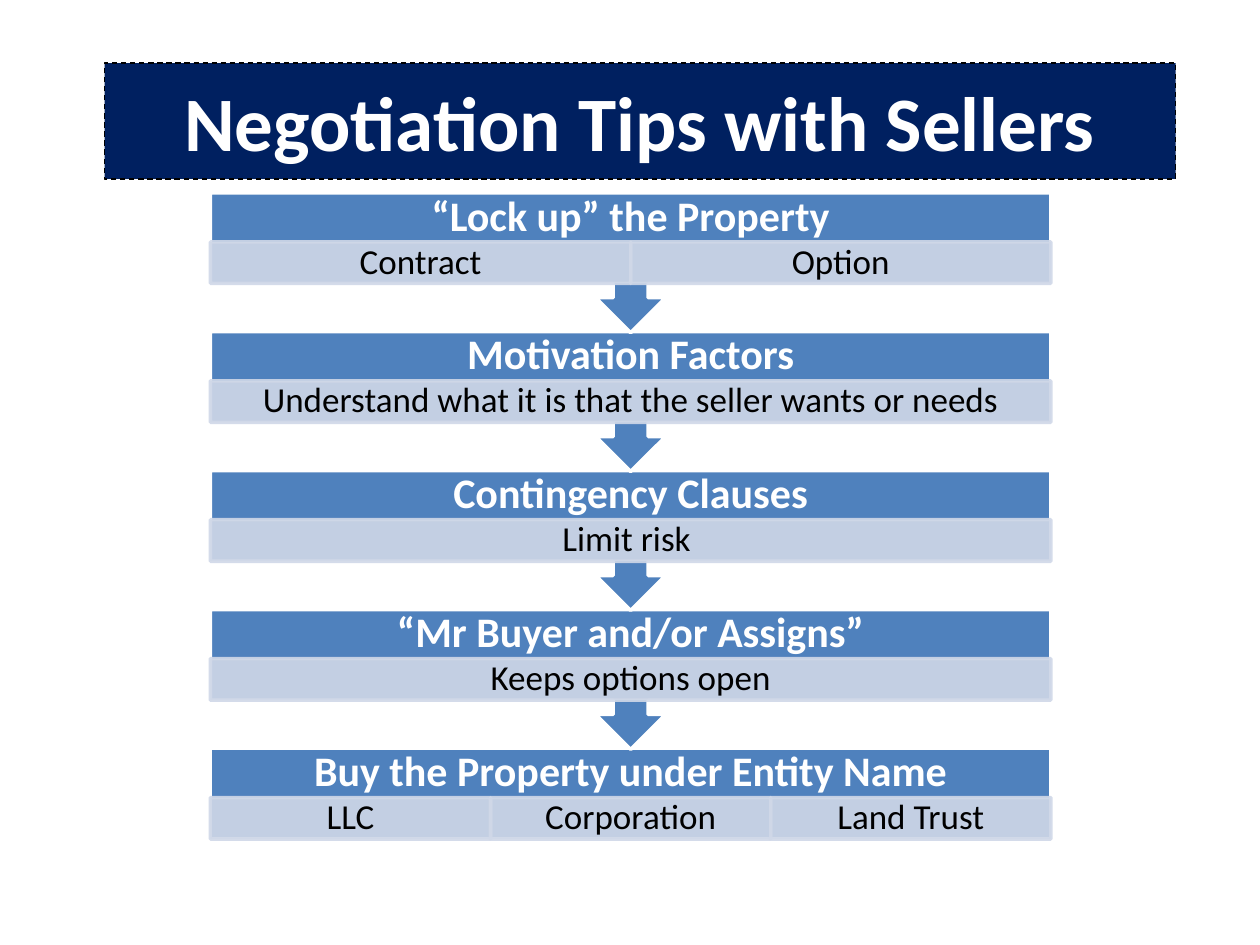
from lxml import etree
from pptx import Presentation
from pptx import util as u
from pptx.dml.color import RGBColor
from pptx.enum import dml, shapes, text
from pptx.oxml.ns import qn

FONT = "Calibri"
WHITE, BLACK, NAVY, BLUE, PALE = "FFFFFF", "000000", "002060", "4F81BD", "D0D8E8"

# Flow geometry in inches
LEFT, WIDTH = 1.67, 6.67
FIRST_TOP, LAST_TOP = 1.53, 5.94
HEADING_HEIGHT, DETAIL_HEIGHT = 0.39, 0.33
CALLOUT_HEIGHT, LAST_HEIGHT = 1.11, 0.72

STEPS = [
    ("“Lock up” the Property", ["Contract", "Option"]),
    ("Motivation Factors", ["Understand what it is that the seller wants or needs"]),
    ("Contingency Clauses", ["Limit risk "]),
    ("“Mr Buyer and/or Assigns”", ["Keeps options open"]),
    ("Buy the Property under Entity Name", ["LLC", "Corporation", "Land Trust"]),
]


def color(value):
    return RGBColor.from_string(value)


def paint(shape, fill, line, width, opacity=None):
    """Fill and outline a shape, optionally see-through (opacity in percent)."""
    shape.fill.solid()
    shape.fill.fore_color.rgb = color(fill)
    shape.line.color.rgb = color(line)
    shape.line.width = u.Pt(width)
    if opacity is not None:
        for tone in shape._element.spPr.iter(qn("a:srgbClr")):
            etree.SubElement(tone, qn("a:alpha"), val=str(opacity * 1000))


def write(shape, wording, size, tint, bold=False, insets=(0.1, 0.05), spacing=0.9):
    """Put one centred line into a shape; insets are (sides, top and bottom)."""
    frame = shape.text_frame
    frame.word_wrap = True
    frame.auto_size = text.MSO_AUTO_SIZE.NONE
    frame.vertical_anchor = text.MSO_ANCHOR.MIDDLE
    frame.margin_left = frame.margin_right = u.Inches(insets[0])
    frame.margin_top = frame.margin_bottom = u.Inches(insets[1])
    para = frame.paragraphs[0]
    para.alignment = text.PP_ALIGN.CENTER
    para.line_spacing = spacing
    span = para.add_run()
    span.text = wording
    span.font.name = FONT
    span.font.size = u.Pt(size)
    span.font.bold = bold
    span.font.color.rgb = color(tint)


def add_box(flow, kind, left, top, width, height):
    box = flow.shapes.add_shape(kind, *map(u.Inches, (left, top, width, height)))
    box.shadow.inherit = False
    return box


def add_title(page, wording):
    title = page.shapes.title
    title.left, title.top = u.Inches(0.83), u.Inches(0.5)
    title.width, title.height = u.Inches(8.5), u.Inches(0.92)
    paint(title, NAVY, BLACK, 0.75)
    title.line.dash_style = dml.MSO_LINE.DASH
    write(title, wording, 44, WHITE, bold=True, spacing=1.0)


def add_step(flow, top, heading, details, is_last):
    # Block, with a down arrow to the next step unless it is the last
    if is_last:
        block = add_box(flow, shapes.MSO_SHAPE.RECTANGLE, LEFT, top, WIDTH, LAST_HEIGHT)
    else:
        block = add_box(flow, shapes.MSO_SHAPE.UP_ARROW_CALLOUT,
                        LEFT, top, WIDTH, CALLOUT_HEIGHT)
        block.rotation = 180
    paint(block, BLUE, WHITE, 2)

    # Heading, kept apart so that it stays upright
    label = flow.shapes.add_textbox(
        *map(u.Inches, (LEFT, top, WIDTH, HEADING_HEIGHT)))
    write(label, heading, 24, WHITE, bold=True, insets=(0.19, 0.19))

    # Details share the width equally
    cell_width = WIDTH / len(details)
    detail_top = top + HEADING_HEIGHT
    for column, detail in enumerate(details):
        cell = add_box(flow, shapes.MSO_SHAPE.RECTANGLE, LEFT + column * cell_width,
                       detail_top, cell_width, DETAIL_HEIGHT)
        paint(cell, PALE, PALE, 2, opacity=90)
        write(cell, detail, 20, BLACK, insets=(0.16, 0.03))


def main():
    deck = Presentation()
    deck.slide_width, deck.slide_height = u.Inches(10), u.Inches(7.5)
    page = deck.slides.add_slide(deck.slide_layouts[0])
    subtitle = page.placeholders[1]._element
    subtitle.getparent().remove(subtitle)

    add_title(page, "Negotiation Tips with Sellers")

    # Last step first, so each arrow lies over the step below it
    flow = page.shapes.add_group_shape()
    last = len(STEPS) - 1
    pitch = (LAST_TOP - FIRST_TOP) / last
    for index in range(last, -1, -1):
        heading, details = STEPS[index]
        add_step(flow, FIRST_TOP + index * pitch, heading, details, index == last)

    deck.save("out.pptx")


if __name__ == "__main__":
    main()
